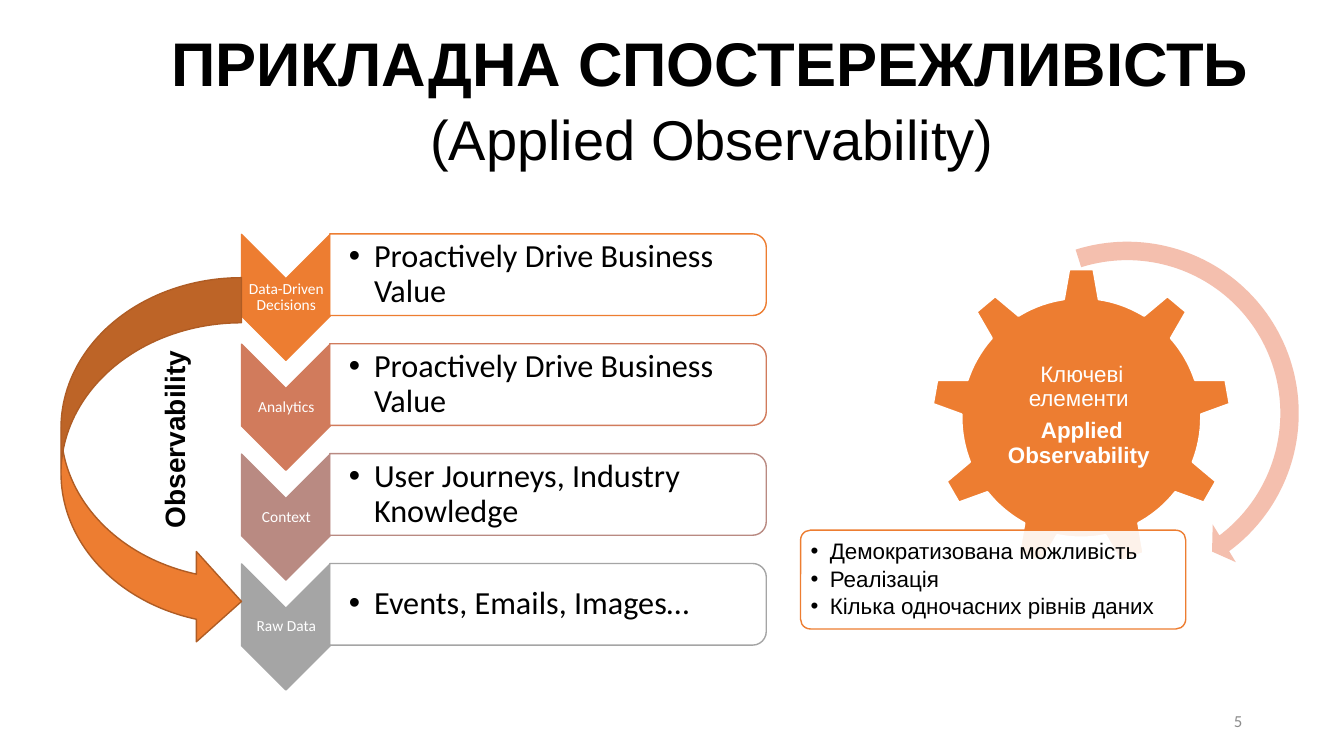
from dataclasses import dataclass

from lxml import etree
from pptx import Presentation
from pptx.dml.color import RGBColor
from pptx.enum.shapes import MSO_SHAPE
from pptx.enum.text import MSO_ANCHOR, PP_ALIGN
from pptx.oxml.ns import qn
from pptx.util import Inches, Pt

GEAR, ARC, SWOOP = MSO_SHAPE.GEAR_9, MSO_SHAPE.CIRCULAR_ARROW, MSO_SHAPE.CURVED_UP_ARROW
CHEVRON, TAB, ROUND = MSO_SHAPE.CHEVRON, MSO_SHAPE.ROUND_2_SAME_RECTANGLE, MSO_SHAPE.ROUNDED_RECTANGLE
LEFT, CENTER, RIGHT = PP_ALIGN.LEFT, PP_ALIGN.CENTER, PP_ALIGN.RIGHT
TOP, MIDDLE = MSO_ANCHOR.TOP, MSO_ANCHOR.MIDDLE


@dataclass(frozen=True)
class Theme:
    sans: str = "Arial"
    body: str = "Calibri"
    black: str = "000000"
    white: str = "FFFFFF"
    gray: str = "8C8C8C"
    orange: str = "ED7D31"
    rust: str = "AF5C24"
    peach: str = "F4BFAE"
    steps: tuple = ("ED7D31", "D17B5C", "B98A82", "A5A5A5")
    title: int = 44
    sub: int = 40
    item: int = 23
    side: int = 20
    note: int = 16
    page: int = 12
    label: int = 11


def rgb(code):
    return RGBColor.from_string(code)


def apply(target, values):
    for name, value in values.items():
        setattr(target, name, value)


class Deck:
    def __init__(self, theme):
        self.theme = theme
        self.file = Presentation()
        apply(self.file, {"slide_width": Inches(13.33), "slide_height": Inches(7.5)})
        self.slide = self.file.slides.add_slide(self.file.slide_layouts[6])

    def shape(self, kind, box, fill, line=None, width=1, turn=0, adjust=(), alpha=None):
        """Draw a preset shape; alpha is the opacity of its fill in percent."""
        item = self.slide.shapes.add_shape(kind, *map(Inches, box))
        item.shadow.inherit = False
        item.rotation = turn
        for spot, value in enumerate(adjust):
            item.adjustments[spot] = value
        item.fill.solid()
        item.fill.fore_color.rgb = rgb(fill)
        if alpha:
            color = item.fill._xPr.find(qn("a:solidFill"))[0]
            etree.SubElement(color, qn("a:alpha")).set("val", str(alpha * 1000))
        if line:
            item.line.color.rgb = rgb(line)
            item.line.width = Pt(width)
        else:
            item.line.fill.background()

    def text(self, box, lines, size, color, font, bold=False, align=LEFT, anchor=TOP,
             pad=(0.1, 0.05, 0.1, 0.05), space=1.0, after=0, indent=0, turn=0):
        """Add a text box; after is a share of the type size, an indent brings bullets."""
        item = self.slide.shapes.add_textbox(*map(Inches, box))
        item.rotation = turn
        frame = item.text_frame
        sides = ("margin_left", "margin_top", "margin_right", "margin_bottom")
        apply(frame, {"word_wrap": True, "vertical_anchor": anchor,
                      **dict(zip(sides, map(Inches, pad)))})
        for spot, line in enumerate(lines):
            para = frame.add_paragraph() if spot else frame.paragraphs[0]
            apply(para, {"alignment": align, "line_spacing": space,
                         "space_after": Pt(size * after)})
            if indent:
                self.bullet(para, indent)
            run = para.add_run()
            run.text = line
            apply(run.font, {"size": Pt(size), "name": font, "bold": bold})
            run.font.color.rgb = rgb(color)
        return frame

    def bullet(self, para, indent):
        props = para._p.get_or_add_pPr()
        props.set("marL", str(Inches(indent)))
        props.set("indent", str(-Inches(indent)))
        etree.SubElement(props, qn("a:buFont")).set("typeface", self.theme.sans)
        etree.SubElement(props, qn("a:buChar")).set("char", "•")

    def step(self, top, color, label, item):
        """Draw one chevron with its label and the tab beside it."""
        look = self.theme
        self.shape(CHEVRON, (2.21, top, 1.25, 0.88), color, color, turn=90)
        self.text((2.4, top + 0.25, 0.88, 0.38), [label], look.label, look.white, look.body,
                  align=CENTER, anchor=MIDDLE, pad=(0.01,) * 4, space=0.9, after=0.35)
        self.shape(TAB, (5.03, top - 1.95, 0.81, 4.33), look.white, color, turn=90, alpha=90)
        self.text((3.28, top - 0.15, 4.29, 0.73), [item], look.item, look.black, look.body,
                  anchor=MIDDLE, pad=(0.18, 0.02, 0.02, 0.02), space=0.9, after=0.15, indent=0.25)


def main():
    look = Theme()
    deck = Deck(look)

    title = deck.text((1.6, 0.2, 11.23, 1.51), ["ПРИКЛАДНА СПОСТЕРЕЖЛИВІСТЬ", "(Applied Observability)"],
                      look.title, look.black, look.sans, bold=True)
    sub = title.paragraphs[1]
    apply(sub, {"alignment": CENTER, "space_before": Pt(4)})
    apply(sub.runs[0].font, {"size": Pt(look.sub), "bold": False})
    sub._p.get_or_add_pPr().set("marR", str(Inches(0.31)))

    deck.shape(GEAR, (9.24, 2.66, 2.97, 2.97), look.orange, look.white, 1.5)
    core = deck.text((9.84, 3.36, 1.78, 1.53), ["Ключеві елементи ", "Applied Observability "],
                     look.note, look.white, look.sans, align=CENTER, anchor=MIDDLE,
                     pad=(0.02,) * 4, space=0.9, after=0.35)
    core.paragraphs[1].runs[0].font.bold = True
    deck.shape(ROUND, (7.94, 5.26, 3.82, 0.98), look.white, look.orange, adjust=(0.1,), alpha=90)
    deck.text((7.97, 5.29, 3.76, 0.92),
              ["Демократизована можливість", "Реалізація", "Кілька одночасних рівнів даних"],
              look.note, look.black, look.sans, pad=(0.07,) * 4, space=0.9, after=0.15, indent=0.19)
    deck.shape(ARC, (9.35, 2.27, 3.66, 3.66), look.peach,
               adjust=(0.05, 3.13, 31.96, 151.51, 0.06))

    steps = (("Data-Driven Decisions", "Proactively Drive Business Value"),
             ("Analytics", "Proactively Drive Business Value"),
             ("Context", "User Journeys, Industry Knowledge"),
             ("Raw Data", "Events, Emails, Images…"))
    for rank, (color, (label, item)) in enumerate(zip(look.steps, steps)):
        deck.step(2.51 + 1.09 * rank, color, label, item)

    deck.shape(SWOOP, (-0.33, 3.69, 3.66, 1.79), look.orange, look.rust, turn=90)
    deck.text((0.74, 4.13, 1.98, 0.44), ["Observability"], look.side, look.black, look.sans,
              bold=True, turn=270)
    deck.text((9.42, 6.95, 3, 0.4), ["5"], look.page, look.gray, look.body,
              align=RIGHT, anchor=MIDDLE)
    deck.file.save("out.pptx")


if __name__ == "__main__":
    main()
